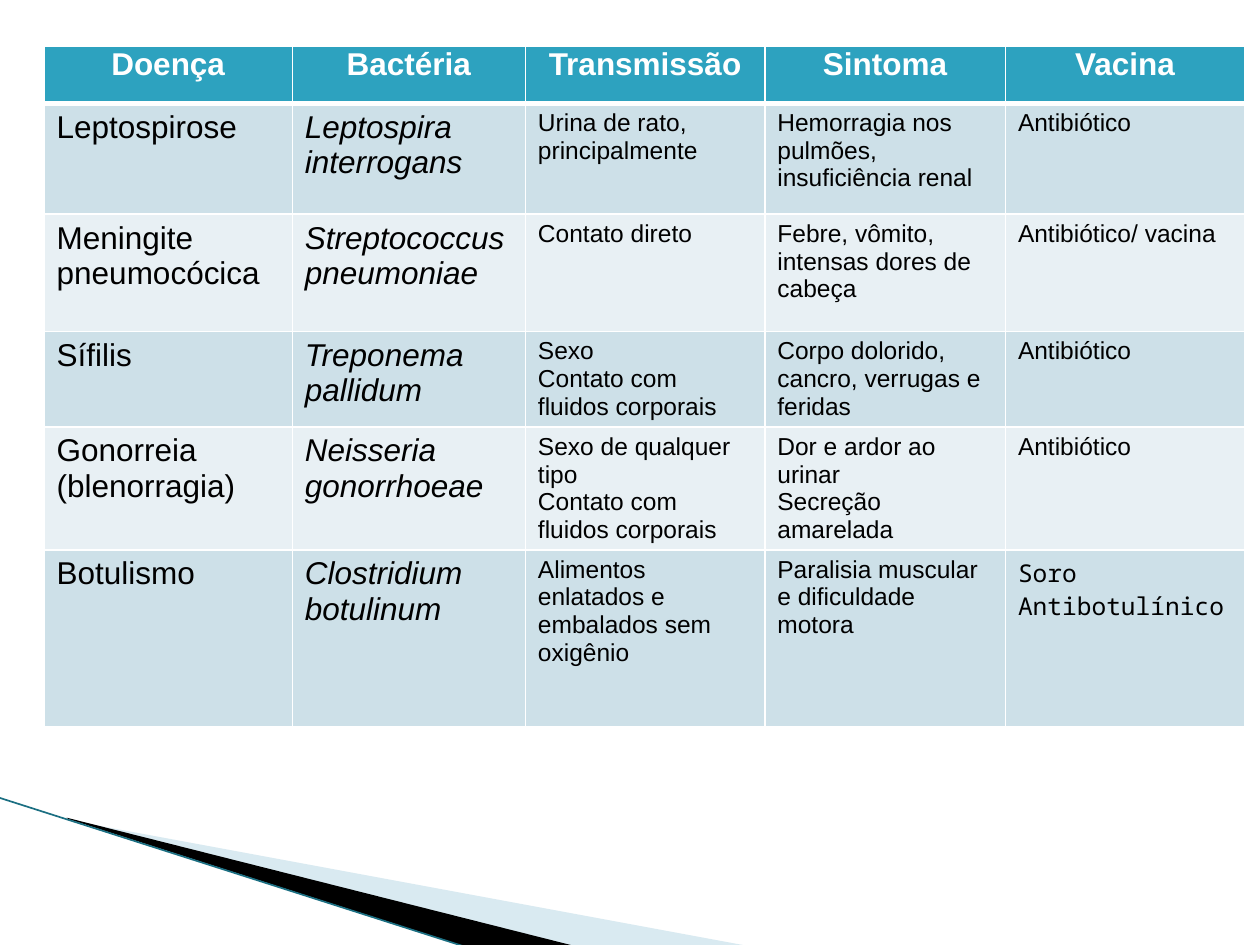
from lxml.etree import SubElement
from pptx import Presentation
from pptx.dml.color import RGBColor
from pptx.enum.shapes import MSO_CONNECTOR
from pptx.enum.text import PP_ALIGN
from pptx.oxml.ns import qn
from pptx.util import Inches, Pt

THEME = {
    "white": "FFFFFF", "black": "000000", "header": "2DA2BF",
    "bands": ("CDE0E8", "E8F0F4"), "wedge": "A0CBDC", "edge": "1B6F82",
    "font": "Arial", "mono": "Noto Sans Mono",
    "large": Pt(18), "small": Pt(14),
}


def add_borders(cell, widths):
    """Draw white borders; widths maps each side to points."""
    properties = cell._tc.get_or_add_tcPr()
    for side, width in widths.items():
        line = SubElement(properties, qn(f"a:ln{side}"), w=str(Pt(width)))
        fill = SubElement(line, qn("a:solidFill"))
        SubElement(fill, qn("a:srgbClr"), val=THEME["white"])


def set_frame(shape, frame):
    """Give a freeform a new frame while its outline stays in place."""
    left, top, width, height = (Inches(length) for length in frame)
    outline = next(shape._element.iter(qn("a:path")))
    for point in outline.iter(qn("a:pt")):
        point.set("x", str(int(point.get("x")) + shape.left - left))
        point.set("y", str(int(point.get("y")) + shape.top - top))
    outline.set("w", str(width))
    outline.set("h", str(height))
    shape.left, shape.top, shape.width, shape.height = left, top, width, height


deck = Presentation()
deck.slide_width, deck.slide_height = Inches(10), Inches(7.5)
page = deck.slides.add_slide(deck.slide_layouts[6])

# Corner wedges, whose outlines reach past their frames
wedges = [
    ([(0.55, 6.51), (5.95, 7.51), (4.56, 7.51), (0.55, 6.5)],
     (0.78, 5.47, 4.16, 1.58), THEME["wedge"], 40),
    ([(0.53, 6.49), (4.57, 7.51), (3.72, 7.52), (0.54, 6.5)],
     (-0.06, 6.33, 4.16, 0.92), THEME["black"], 100),
]
for corners, frame, color, opacity in wedges:
    points = [(Inches(x), Inches(y)) for x, y in corners]
    builder = page.shapes.build_freeform(*points[0], scale=1.0)
    builder.add_line_segments(points[1:], close=True)
    wedge = builder.convert_to_shape()
    set_frame(wedge, frame)
    wedge.shadow.inherit = False
    wedge.line.fill.background()
    wedge.fill.solid()
    wedge.fill.fore_color.rgb = RGBColor.from_string(color)
    if opacity < 100:
        color_node = wedge._element.spPr.find(qn("a:solidFill"))[0]
        SubElement(color_node, qn("a:alpha"), val=str(opacity * 1000))

# Thin line along the wedges
edge = page.shapes.add_connector(
    MSO_CONNECTOR.STRAIGHT, Inches(-0.01), Inches(6.33), Inches(3.71), Inches(7.52))
edge.line.color.rgb = RGBColor.from_string(THEME["edge"])
edge.line.width = Pt(0.95)
SubElement(edge._element.spPr, qn("a:effectLst"))

# Table of diseases: a line break starts a new paragraph
rows = [
    ("Doença", "Bactéria", "Transmissão", "Sintoma", "Vacina"),
    ("Leptospirose", "Leptospira interrogans", "Urina de rato, principalmente",
     "Hemorragia nos pulmões, insuficiência renal", "Antibiótico"),
    ("Meningite pneumocócica", "Streptococcus pneumoniae", "Contato direto",
     "Febre, vômito, intensas dores de cabeça", "Antibiótico/ vacina"),
    ("Sífilis", "Treponema pallidum", "Sexo\nContato com fluidos corporais",
     "Corpo dolorido, cancro, verrugas e feridas", "Antibiótico"),
    ("Gonorreia (blenorragia)", "Neisseria gonorrhoeae",
     "Sexo de qualquer tipo\nContato com fluidos corporais",
     "Dor e ardor ao urinar\nSecreção amarelada", "Antibiótico"),
    ("Botulismo", "Clostridium botulinum",
     "Alimentos enlatados e embalados sem oxigênio",
     "Paralisia muscular e dificuldade motora", "Soro Antibotulínico"),
]
column_widths = [1.97, 1.85, 1.9, 1.91, 1.9]
row_heights = [0.45, 0.88, 0.93, 0.76, 0.97, 1.4]
table = page.shapes.add_table(
    len(rows), len(column_widths), Inches(0.35), Inches(0.37),
    Inches(sum(column_widths)), Inches(sum(row_heights))).table
for column, width in zip(table.columns, column_widths):
    column.width = Inches(width)
for row, height in zip(table.rows, row_heights):
    row.height = Inches(height)

for row_index, texts in enumerate(rows):
    is_header = row_index == 0
    fill_color = THEME["header"] if is_header else THEME["bands"][(row_index - 1) % 2]
    side_inset, end_inset = (0, 0) if is_header else (0.1, 0.05)
    for column_index, text in enumerate(texts):
        cell = table.cell(row_index, column_index)
        cell.margin_left = cell.margin_right = Inches(side_inset)
        cell.margin_top = cell.margin_bottom = Inches(end_inset)
        add_borders(cell, {"L": 1, "R": 1, "T": 3 if row_index == 1 else 1,
                           "B": 3 if is_header else 1})
        cell.fill.solid()
        cell.fill.fore_color.rgb = RGBColor.from_string(fill_color)
        cell.text = text
        is_serum = text.startswith("Soro")
        font_format = {
            "name": THEME["mono"] if is_serum else THEME["font"],
            "size": THEME["large"] if is_header or column_index < 2 else THEME["small"],
            "bold": is_header,
            "italic": not is_header and column_index == 1,
        }
        text_color = THEME["white"] if is_header else THEME["black"]
        for para in cell.text_frame.paragraphs:
            para.alignment = PP_ALIGN.CENTER if is_header else PP_ALIGN.LEFT
            for span in para.runs:
                for attribute, value in font_format.items():
                    setattr(span.font, attribute, value)
                span.font.color.rgb = RGBColor.from_string(text_color)

deck.save("out.pptx")
